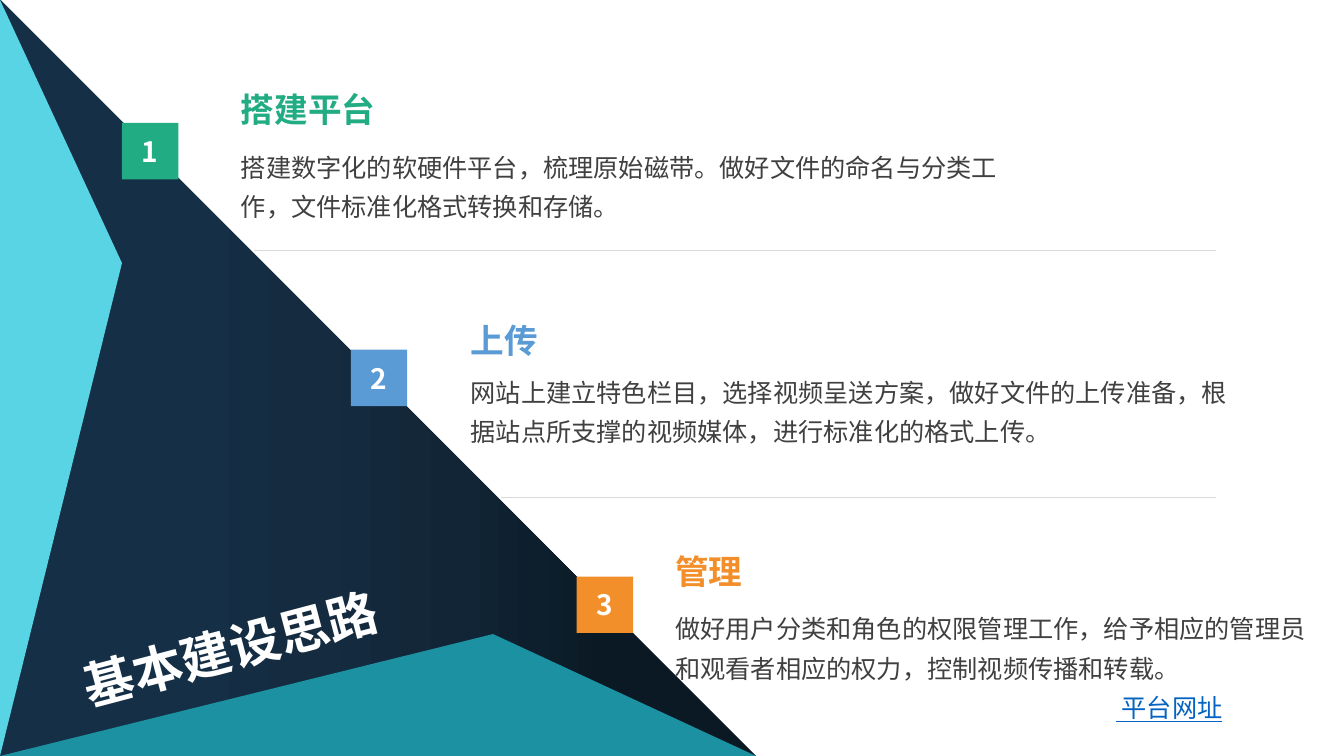
from dataclasses import dataclass

from lxml.etree import SubElement
from pptx import Presentation
from pptx.dml.color import RGBColor
from pptx.enum.shapes import MSO_CONNECTOR, MSO_SHAPE
from pptx.enum.text import MSO_ANCHOR, MSO_AUTO_SIZE, PP_ALIGN
from pptx.oxml.ns import qn
from pptx.slide import Slide
from pptx.util import Inches, Pt

WHITE = RGBColor(0xFF, 0xFF, 0xFF)
GREEN = RGBColor(0x22, 0xAC, 0x83)
BLUE = RGBColor(0x5B, 0x9B, 0xD5)
ORANGE = RGBColor(0xF3, 0x8F, 0x2B)
CYAN = RGBColor(0x59, 0xD4, 0xE4)
TEAL = RGBColor(0x1B, 0x91, 0xA2)
BODY_GRAY = RGBColor(0x40, 0x40, 0x40)
RULE_GRAY = RGBColor(0xD9, 0xD9, 0xD9)
LINK_BLUE = RGBColor(0x05, 0x63, 0xC1)
NAVY_STOPS = [
    (20, RGBColor(0x0B, 0x19, 0x24)),
    (29, RGBColor(0x0D, 0x1F, 0x2D)),
    (39, RGBColor(0x12, 0x25, 0x36)),
    (59, RGBColor(0x15, 0x2B, 0x40)),
    (75, RGBColor(0x15, 0x2F, 0x46)),
    (89, RGBColor(0x16, 0x2F, 0x45)),
]
SIDE = 7.5
FACET = 1.21
BADGE = 0.56


@dataclass
class SlideBuilder:
    slide: Slide
    font: str = "Noto Sans CJK SC"

    def run(self, paragraph, text, size, color, bold=False, underline=False):
        run = paragraph.add_run()
        run.text = text
        run.font.size = Pt(size)
        run.font.bold = bold
        run.font.underline = underline
        run.font.color.rgb = color
        run.font.name = self.font
        SubElement(run.font._element, qn("a:ea"), typeface=self.font)

    def rule(self, left, right, top):
        rule = self.slide.shapes.add_connector(
            MSO_CONNECTOR.STRAIGHT, Inches(left), Inches(top), Inches(right), Inches(top))
        rule.line.color.rgb = RULE_GRAY
        rule.line.width = Pt(0.5)
        SubElement(rule._element.spPr, qn("a:effectLst"))

    def shape(self, kind, left, top, width, height, color=None):
        shape = self.slide.shapes.add_shape(
            kind, Inches(left), Inches(top), Inches(width), Inches(height))
        shape.shadow.inherit = False
        shape.line.fill.background()
        if color is not None:
            shape.fill.solid()
            shape.fill.fore_color.rgb = color
        return shape

    def gradient_triangle(self, size, stops):
        triangle = self.shape(MSO_SHAPE.RIGHT_TRIANGLE, 0, 0, size, size)
        triangle.fill.gradient()
        triangle.fill.gradient_angle = 180
        stop_list = triangle._element.spPr.find(qn("a:gradFill")).find(qn("a:gsLst"))
        for default_stop in list(stop_list):
            stop_list.remove(default_stop)
        for percent, color in stops:
            stop = SubElement(stop_list, qn("a:gs"), pos=str(percent * 1000))
            SubElement(stop, qn("a:srgbClr"), val=str(color))

    def facet(self, left, top, color, rotation=0, flipped=False):
        facet = self.shape(MSO_SHAPE.ISOSCELES_TRIANGLE, left, top, SIDE, FACET, color)
        facet.adjustments[0] = 0.348
        facet.rotation = rotation
        if flipped:
            facet._element.spPr.find(qn("a:xfrm")).set("flipH", "1")

    def badge(self, left, top, number, color):
        badge = self.shape(MSO_SHAPE.RECTANGLE, left, top, BADGE, BADGE, color)
        badge.text_frame.vertical_anchor = MSO_ANCHOR.MIDDLE
        paragraph = badge.text_frame.paragraphs[0]
        paragraph.alignment = PP_ALIGN.CENTER
        self.run(paragraph, str(number), 20, WHITE, bold=True)

    def text_box(self, left, top, width, height, rotation=0):
        box = self.slide.shapes.add_textbox(
            Inches(left), Inches(top), Inches(width), Inches(height))
        box.rotation = rotation
        box.text_frame.word_wrap = True
        box.text_frame.auto_size = MSO_AUTO_SIZE.SHAPE_TO_FIT_TEXT
        return box.text_frame

    def title(self, text):
        paragraph = self.text_box(0.35, 6.08, 3.88, 0.74, 345.2).paragraphs[0]
        paragraph.alignment = PP_ALIGN.CENTER
        self.run(paragraph, text, 36, WHITE, bold=True)

    def heading(self, left, top, width, text, color):
        paragraph = self.text_box(left, top, width, 0.53).paragraphs[0]
        self.run(paragraph, text, 24, color, bold=True)

    def body(self, left, top, width, height, text):
        frame = self.text_box(left, top, width, height)
        paragraph = frame.paragraphs[0]
        paragraph.line_spacing = 1.3
        self.run(paragraph, text, 18, BODY_GRAY)
        return frame

    def site_label(self, frame, text, indent):
        paragraph = frame.add_paragraph()
        paragraph.line_spacing = 1.3
        properties = paragraph._p.get_or_add_pPr()
        properties.set("marL", str(Inches(indent)))
        properties.set("indent", "0")
        self.run(paragraph, text, 18, LINK_BLUE, underline=True)


def main():
    presentation = Presentation()
    presentation.slide_width = Inches(13.33)
    presentation.slide_height = Inches(SIDE)
    builder = SlideBuilder(presentation.slides.add_slide(presentation.slide_layouts[6]))

    for left, top in [(2.52, 2.48), (4.97, 4.93)]:
        builder.rule(left, 12.06, top)

    builder.gradient_triangle(SIDE, NAVY_STOPS)
    builder.facet((FACET - SIDE) / 2, (SIDE - FACET) / 2, CYAN, rotation=90)
    builder.facet(0, SIDE - FACET, TEAL, flipped=True)
    builder.title("基本建设思路")

    steps = [
        (GREEN, (1.21, 1.22), (2.29, 0.83, 2.28), "搭建平台", (1.37, 7.85, 0.88),
         "搭建数字化的软硬件平台，梳理原始磁带。做好文件的命名与分类工作，文件标准化格式转换和存储。"),
        (BLUE, (3.48, 3.47), (4.57, 3.12, 1.31), "上传", (3.6, 7.85, 0.88),
         "网站上建立特色栏目，选择视频呈送方案，做好文件的上传准备，"
         "根据站点所支撑的视频媒体，进行标准化的格式上传。"),
        (ORANGE, (5.72, 5.72), (6.6, 5.42, 1.31), "管理", (5.95, 6.54, 1.27),
         "做好用户分类和角色的权限管理工作，给予相应的管理员和观看者相应的权力，控制视频传播和转载。"),
    ]
    for number, (color, badge_at, heading_at, heading, body_at, body) in enumerate(steps, 1):
        builder.badge(*badge_at, number, color)
        builder.heading(*heading_at, heading, color)
        description = builder.body(heading_at[0], *body_at, body)
    builder.site_label(description, " 平台网址", 4.37)

    presentation.save("out.pptx")


if __name__ == "__main__":
    main()
